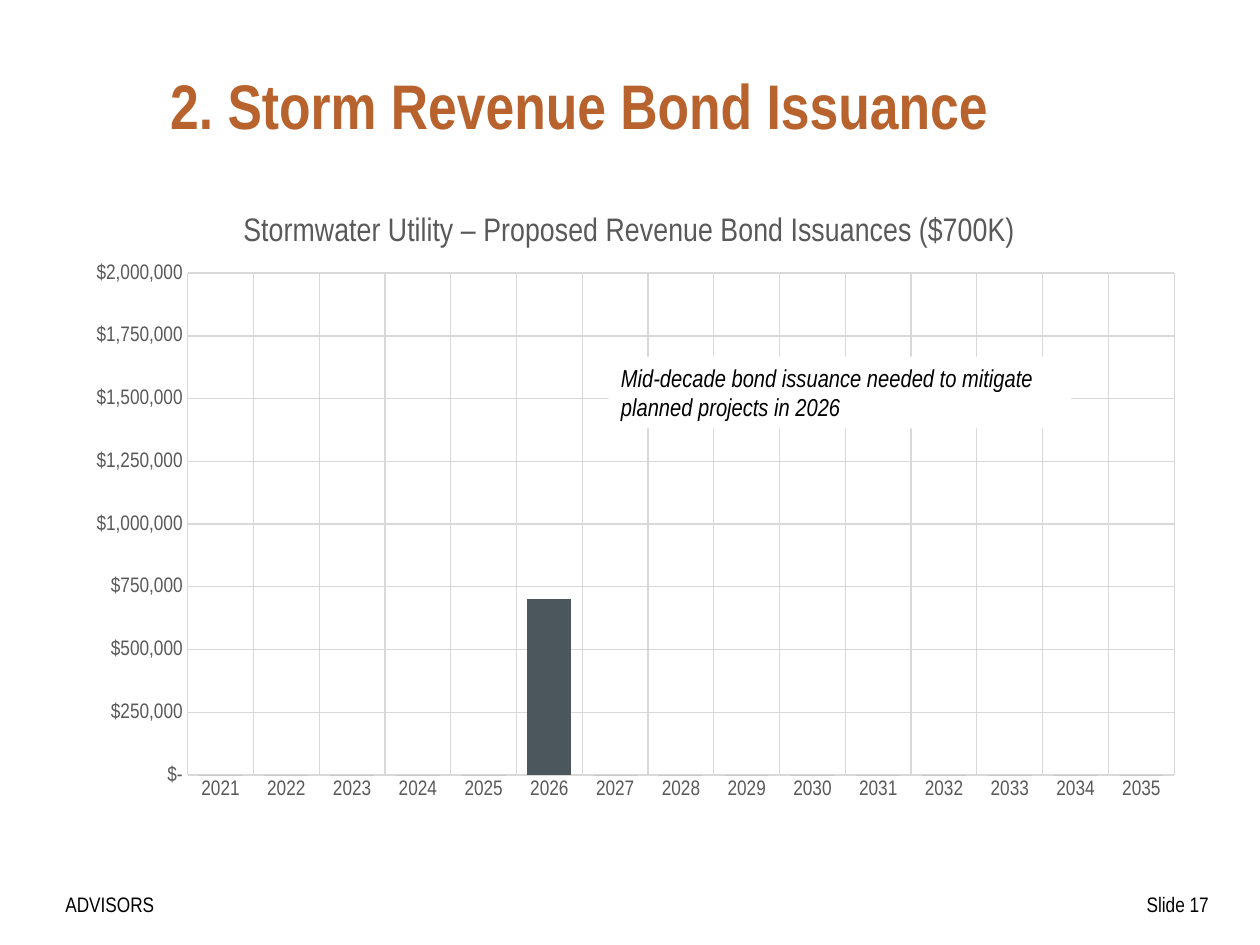
from lxml import etree
from pptx import Presentation
from pptx import util as u
from pptx.chart.data import CategoryChartData
from pptx.dml.color import RGBColor
from pptx.enum import chart as charts, shapes, text
from pptx.oxml import parse_xml

PX = 9144  # EMU in one px, 100 px to the inch
FONT = "Arial Narrow"
COLORS = {"title": "B8632E", "text": "000000", "label": "595959",
          "grid": "D9D9D9", "bar": "4B575D", "paper": "FFFFFF"}
CHART_NS = "http://schemas.openxmlformats.org/drawingml/2006/chart"


def color(name):
    return RGBColor.from_string(COLORS[name])


def place(box):
    return [u.Emu(length * PX) for length in box]


def style_font(font, size, name="text", bold=False, italic=False):
    font.name, font.size = FONT, u.Pt(size)
    font.bold, font.italic = bold, italic
    font.color.rgb = color(name)


def write(frame, words, size, align=text.PP_ALIGN.LEFT,
          anchor=text.MSO_ANCHOR.TOP, **style):
    frame.word_wrap = True
    frame.vertical_anchor = anchor
    para = frame.paragraphs[0]
    para.alignment = align
    span = para.add_run()
    span.text = words
    style_font(span.font, size, **style)


def add_title(page, box, words):
    title = page.shapes.title
    title.left, title.top, title.width, title.height = place(box)
    write(title.text_frame, words, 36, anchor=text.MSO_ANCHOR.MIDDLE,
          name="title", bold=True)


def add_label(page, box, words, **style):
    label = page.shapes.add_textbox(*place(box))
    write(label.text_frame, words, 12, **style)


def add_note(page, box, words):
    note = page.shapes.add_shape(shapes.MSO_SHAPE.RECTANGLE, *place(box))
    note.shadow.inherit = False
    note.fill.solid()
    note.fill.fore_color.rgb = color("paper")
    note.line.fill.background()
    write(note.text_frame, words, 14, italic=True)


def set_plot_area(chart, **fractions):
    """Fix the inner plot area as fractions of the chart's box."""
    plot_area = chart.plots[0]._element.getparent()
    for old in plot_area.findall(f"{{{CHART_NS}}}layout"):
        plot_area.remove(old)
    layout = parse_xml(f'<c:layout xmlns:c="{CHART_NS}"><c:manualLayout/></c:layout>')
    settings = {"layoutTarget": "inner", "xMode": "edge", "yMode": "edge", **fractions}
    for tag, value in settings.items():
        etree.SubElement(layout[0], f"{{{CHART_NS}}}{tag}").set("val", str(value))
    plot_area.insert(0, layout)


def style_axis(axis):
    axis.major_tick_mark = axis.minor_tick_mark = charts.XL_TICK_MARK.NONE
    axis.has_major_gridlines = True
    style_font(axis.tick_labels.font, 12, "label")
    for line in (axis.format.line, axis.major_gridlines.format.line):
        line.color.rgb = color("grid")
        line.width = u.Pt(0.75)


def add_bond_chart(page, box, heading, issuances):
    data = CategoryChartData()
    data.categories = [str(year) for year in issuances]
    data.add_series("Series 1", list(issuances.values()))
    chart = page.shapes.add_chart(charts.XL_CHART_TYPE.COLUMN_STACKED,
                                  *place(box), data).chart
    style_font(chart.font, 10)
    chart.has_legend = False
    chart.has_title = True
    write(chart.chart_title.text_frame, heading, 18.6,
          align=text.PP_ALIGN.CENTER, name="label")
    chart.chart_title.include_in_layout = False

    plot = chart.plots[0]
    plot.gap_width, plot.overlap, plot.vary_by_categories = 50, -8, False
    bars = plot.series[0].format.fill
    bars.solid()
    bars.fore_color.rgb = color("bar")

    years, dollars = chart.category_axis, chart.value_axis
    style_axis(years)
    style_axis(dollars)
    dollars.format.line.fill.background()
    dollars.minimum_scale, dollars.maximum_scale = 0, 2000000
    dollars.major_unit = 250000
    dollars.tick_labels.number_format = '"$"#,##0;("$"#,##0);"$-"'
    dollars.tick_labels.number_format_is_linked = False
    set_plot_area(chart, x=0.11, y=0.135, w=0.87, h=0.805)


def main():
    deck = Presentation()
    deck.slide_width, deck.slide_height = place((1000, 750))
    page = deck.slides.add_slide(deck.slide_layouts[5])

    add_label(page, (892, 703, 81, 30), "Slide 17 ", align=text.PP_ALIGN.RIGHT)
    add_label(page, (42, 703, 142, 30), "ADVISORS")
    add_title(page, (125, 33, 825, 100), "2. Storm Revenue Bond Issuance")
    issuances = {year: 0 for year in range(2021, 2036)}
    issuances[2026] = 700000
    add_bond_chart(page, (50, 150, 900, 495),
                   "Stormwater Utility – Proposed Revenue Bond Issuances ($700K)",
                   issuances)
    add_note(page, (483, 283, 367, 57),
             "Mid-decade bond issuance needed to mitigate planned projects in 2026")
    deck.save("out.pptx")


if __name__ == "__main__":
    main()
